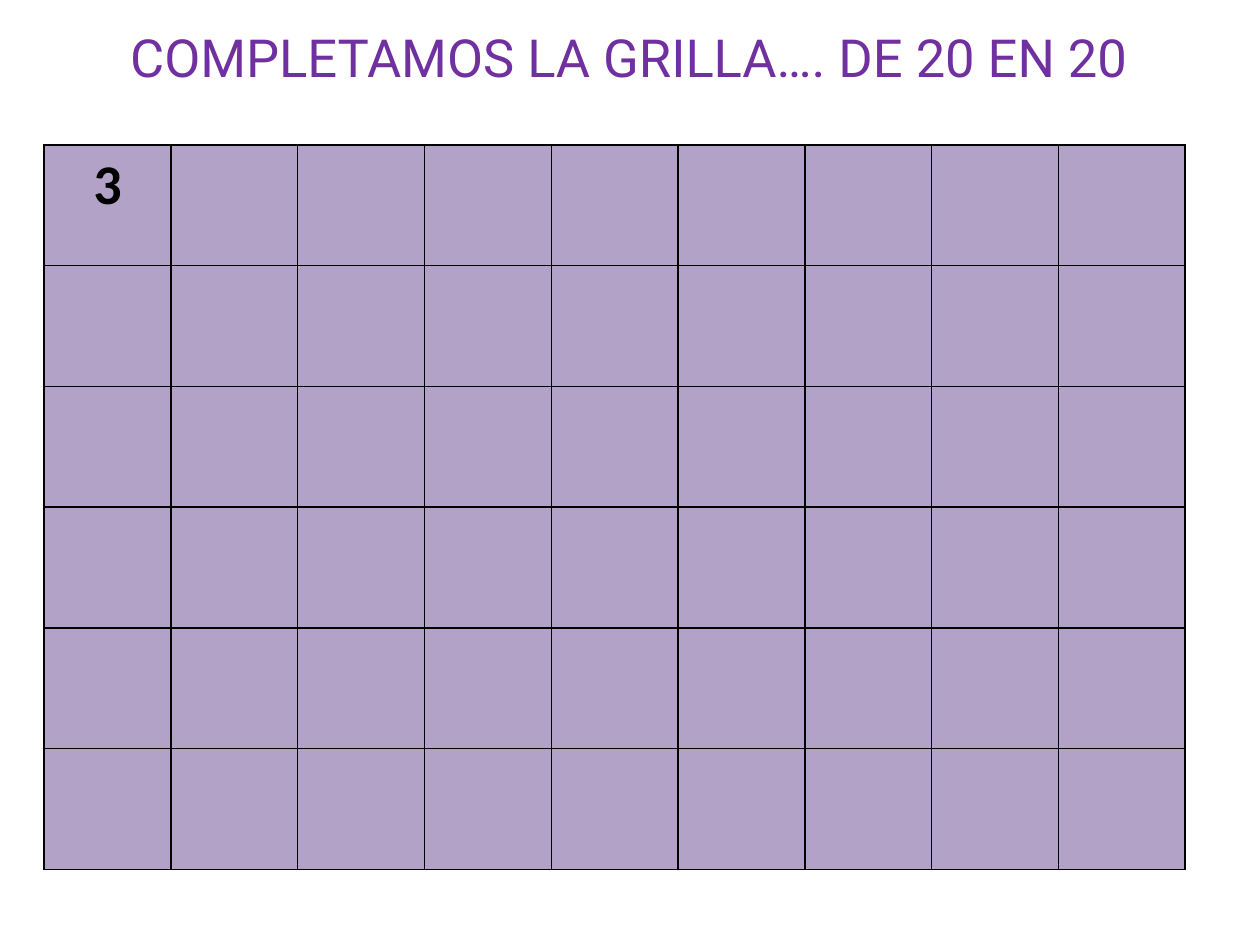
from dataclasses import dataclass

from lxml.etree import SubElement
from pptx import Presentation
from pptx.dml.color import RGBColor
from pptx.enum.text import MSO_ANCHOR, PP_ALIGN
from pptx.oxml.ns import qn
from pptx.util import Inches, Pt

PURPLE = RGBColor(0x70, 0x30, 0xA0)
LILAC = RGBColor(0xB3, 0xA2, 0xC7)
BLACK = RGBColor(0, 0, 0)
TITLE_ONLY = 5
BORDER_TAGS = ("a:lnL", "a:lnR", "a:lnT", "a:lnB")


@dataclass
class Grid:
    left: float
    top: float
    width: float
    height: float
    rows: int
    columns: int
    numbers: dict[tuple[int, int], str]


@dataclass
class TextStyle:
    font: str
    size: float
    color: RGBColor
    bold: bool = False


TITLE_STYLE = TextStyle("Roboto", 30, PURPLE)
NUMBER_STYLE = TextStyle("Calibri", 32, BLACK, bold=True)
NUMBER_GRID = Grid(0.35, 1.15, 9.06, 5.75, rows=6, columns=9, numbers={(0, 0): "3"})


def write(frame, text: str, style: TextStyle) -> None:
    frame.text = text
    para = frame.paragraphs[0]
    para.alignment = PP_ALIGN.CENTER
    para.font.name = style.font
    para.font.size = Pt(style.size)
    para.font.bold = style.bold
    para.font.color.rgb = style.color


def add_borders(cell, color: RGBColor, width: float) -> None:
    properties = cell._tc.get_or_add_tcPr()
    for index, tag in enumerate(BORDER_TAGS):
        line = SubElement(properties, qn(tag), w=str(Pt(width)))
        fill = SubElement(line, qn("a:solidFill"))
        SubElement(fill, qn("a:srgbClr"), val=str(color))
        properties.insert(index, line)  # borders come before the fill


def add_grid(page, grid: Grid) -> None:
    table = page.shapes.add_table(
        grid.rows, grid.columns, Inches(grid.left), Inches(grid.top),
        Inches(grid.width), Inches(grid.height),
    ).table
    table.first_row = table.horz_banding = False
    for row in range(grid.rows):
        for column in range(grid.columns):
            cell = table.cell(row, column)
            cell.fill.solid()
            cell.fill.fore_color.rgb = LILAC
            add_borders(cell, BLACK, 1)
            if (row, column) in grid.numbers:
                write(cell.text_frame, grid.numbers[row, column], NUMBER_STYLE)


def main() -> None:
    deck = Presentation()
    deck.slide_width, deck.slide_height = Inches(10), Inches(7.5)
    page = deck.slides.add_slide(deck.slide_layouts[TITLE_ONLY])

    # Title
    title = page.shapes.title
    title.left, title.top = Inches(0.2), Inches(-0.18)
    title.width, title.height = Inches(9.69), Inches(1.25)
    title.text_frame.vertical_anchor = MSO_ANCHOR.MIDDLE
    write(title.text_frame, "COMPLETAMOS LA GRILLA…. DE 20 EN 20 ", TITLE_STYLE)

    # Grid to fill in
    add_grid(page, NUMBER_GRID)

    deck.save("out.pptx")


if __name__ == "__main__":
    main()
